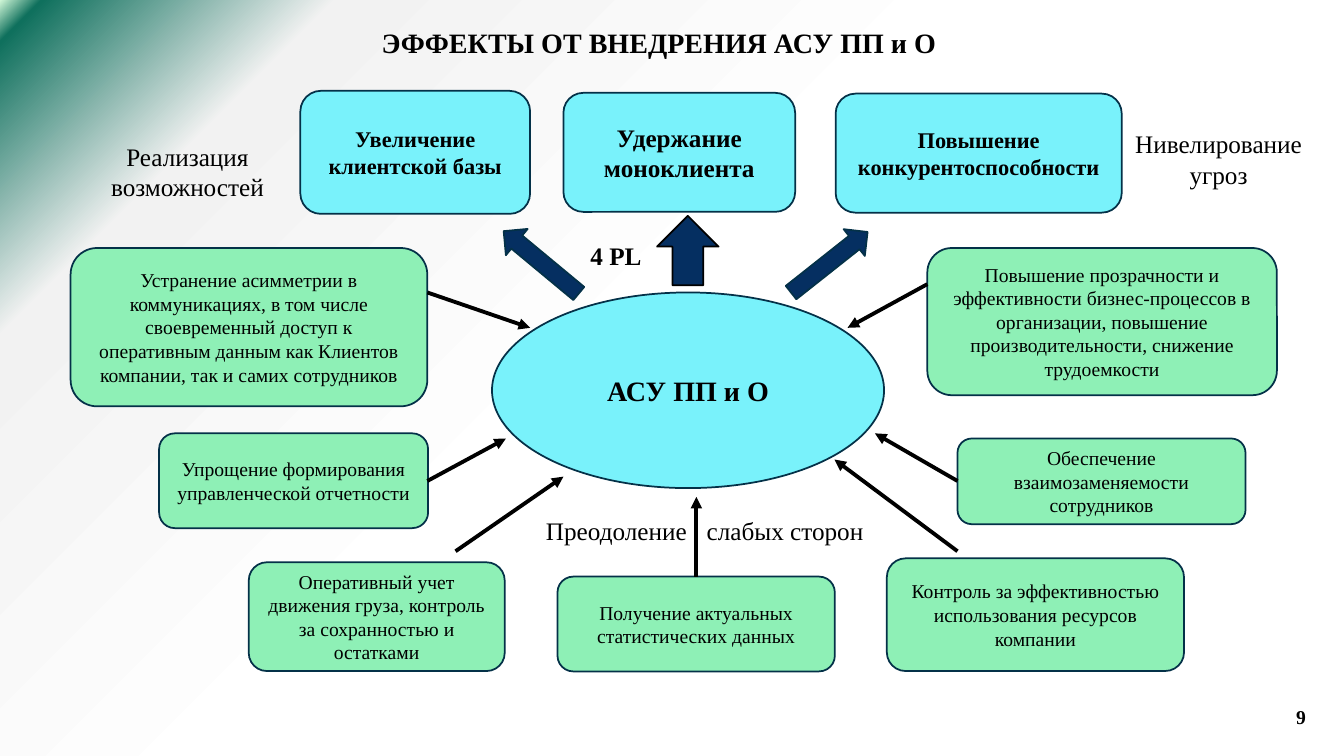
from dataclasses import dataclass

from lxml.etree import SubElement
from pptx import Presentation
from pptx.dml.color import RGBColor
from pptx.enum.shapes import MSO_CONNECTOR as Connector, MSO_SHAPE as Preset
from pptx.enum.text import MSO_ANCHOR as Anchor, PP_ALIGN as Align
from pptx.oxml import parse_xml
from pptx.oxml.ns import nsdecls, qn
from pptx.util import Cm, Pt


@dataclass(frozen=True)
class Theme:
    font: str = "Times New Roman"
    text: str = "000000"
    cyan: str = "79F2FB"
    green: str = "8EF0B6"
    navy: str = "052F61"
    outline: str = "043148"
    backdrop: tuple = ((0, "FFFFFF"), (53, "FFFFFF"), (84, "F2F2F2"), (98, "0F705D"), (100, "D3FADA"))
    heading: int = 20
    label: int = 18
    goal: int = 16
    body: int = 14
    outline_width: float = 1.25
    link_width: float = 2.75


THEME = Theme()

# Outcomes above the hub: text, place, type size
GOALS = [
    ("Увеличение клиентской базы", (7.57, 2.29, 5.79, 3.1), THEME.goal),
    ("Удержание\nмоноклиента", (14.2, 2.34, 5.84, 3), THEME.label),
    ("Повышение конкурентоспособности", (21.06, 2.36, 7.21, 3), THEME.goal),
]

# Effects around the hub: text, place, link start, link end
EFFECTS = [
    ("Устранение асимметрии в коммуникациях, в том числе своевременный доступ к "
     "оперативным данным как Клиентов компании, так и самих сотрудников",
     (1.78, 6.25, 8.99, 3.99), (10.77, 7.37), (13.36, 8.26)),
    ("Упрощение формирования управленческой отчетности",
     (4.01, 10.92, 6.78, 2.39), (10.77, 12.12), (12.75, 11.05)),
    ("Оперативный учет движения груза, контроль за сохранностью и остатками",
     (6.27, 14.17, 6.45, 2.74), (11.48, 13.89), (14.2, 12.01)),
    ("Получение актуальных статистических данных",
     (14.05, 14.53, 6.99, 2.39), (17.55, 14.53), (17.55, 12.52)),
    ("Контроль за эффективностью использования ресурсов компании",
     (22.35, 14.07, 7.49, 2.84), (24.13, 13.89), (21.03, 11.58)),
    ("Обеспечение взаимозаменяемости сотрудников",
     (24.13, 11.05, 7.26, 2.16), (24.13, 12.12), (22.05, 10.92)),
    ("Повышение прозрачности и эффективности бизнес-процессов в организации, "
     "повышение производительности, снижение трудоемкости",
     (23.37, 6.25, 8.81, 3.71), (23.37, 7.16), (21.36, 8.26)),
]

# Block arrows from the hub to the outcomes: place, rotation, outline
BLOCK_ARROWS = [
    ((13.21, 5.38, 0.86, 2.46), 309.7, THEME.outline),
    ((16.56, 5.44, 1.55, 1.75), 0, THEME.text),
    ((20.47, 5.38, 0.86, 2.46), 51.6, THEME.outline),
]


def lengths(values):
    return [Cm(value) for value in values]


def write(box, text, size=THEME.body, bold=False, align=Align.CENTER,
          anchor=Anchor.MIDDLE, tab=None):
    frame = box.text_frame
    frame.word_wrap = True
    frame.vertical_anchor = anchor
    for index, line in enumerate(text.split("\n")):
        para = frame.add_paragraph() if index else frame.paragraphs[0]
        para.alignment = align
        if tab:
            stops = SubElement(para._p.get_or_add_pPr(), qn("a:tabLst"))
            SubElement(stops, qn("a:tab"), pos=str(Cm(tab)), algn="l")
        span = para.add_run()
        span.text = line
        span.font.name = THEME.font
        span.font.size = Pt(size)
        span.font.bold = bold
        span.font.color.rgb = RGBColor.from_string(THEME.text)


def add_label(slide, text, place, size=THEME.label, anchor=Anchor.TOP, **style):
    box = slide.shapes.add_textbox(*lengths(place))
    write(box, text, size=size, anchor=anchor, **style)


def add_block(slide, preset, place, fill, outline=THEME.outline, rotation=0):
    block = slide.shapes.add_shape(preset, *lengths(place))
    block.shadow.inherit = False
    block.rotation = rotation
    block.fill.solid()
    block.fill.fore_color.rgb = RGBColor.from_string(fill)
    block.line.color.rgb = RGBColor.from_string(outline)
    block.line.width = Pt(THEME.outline_width)
    return block


def add_link(slide, start, end):
    link = slide.shapes.add_connector(Connector.STRAIGHT, *lengths(start + end))
    link.line.color.rgb = RGBColor.from_string(THEME.text)
    link.line.width = Pt(THEME.link_width)
    SubElement(link.line._get_or_add_ln(), qn("a:tailEnd"), type="triangle")
    SubElement(link._element.spPr, qn("a:effectLst"))


def paint_background(slide):
    stops = "".join(
        f'<a:gs pos="{position * 1000}"><a:srgbClr val="{color}"/></a:gs>'
        for position, color in THEME.backdrop)
    slide.element.cSld.insert(0, parse_xml(
        f'<p:bg {nsdecls("p", "a")}><p:bgPr><a:gradFill rotWithShape="1">'
        f'<a:gsLst>{stops}</a:gsLst><a:path path="circle">'
        '<a:fillToRect l="100000" t="100000"/></a:path></a:gradFill>'
        '<a:effectLst/></p:bgPr></p:bg>'))


def main():
    deck = Presentation()
    deck.slide_width, deck.slide_height = Cm(33.87), Cm(19.05)
    slide = deck.slides.add_slide(deck.slide_layouts[6])
    paint_background(slide)

    # Title
    add_label(slide, "ЭФФЕКТЫ ОТ ВНЕДРЕНИЯ АСУ ПП и О", (9.37, 0.53, 18.14, 1.12),
              size=THEME.heading, bold=True, align=Align.LEFT)

    # Hub and boxes
    hub = add_block(slide, Preset.OVAL, (12.4, 7.37, 9.88, 4.93), THEME.cyan)
    write(hub, "АСУ ПП и О", size=THEME.heading, bold=True)
    for text, place, size in GOALS:
        goal = add_block(slide, Preset.ROUNDED_RECTANGLE, place, THEME.cyan)
        write(goal, text, size=size, bold=True)
    for text, place, start, end in EFFECTS:
        effect = add_block(slide, Preset.ROUNDED_RECTANGLE, place, THEME.green)
        write(effect, text)
        add_link(slide, start, end)

    # Block arrows
    for place, rotation, outline in BLOCK_ARROWS:
        add_block(slide, Preset.UP_ARROW, place, THEME.navy, outline, rotation)

    # Labels and page number
    add_label(slide, "Реализация возможностей", (2.39, 3.43, 4.67, 1.8))
    add_label(slide, "Нивелирование\nугроз", (28.27, 3.12, 4.88, 1.8))
    add_label(slide, "4 PL", (14.63, 5.92, 2.06, 1.02), bold=True, align=Align.LEFT)
    add_label(slide, "Преодоление\tслабых сторон", (13.51, 12.85, 9.7, 1.02),
              align=Align.LEFT, tab=4.05)
    add_label(slide, "9", (31.7, 17.09, 2.18, 1.96), size=THEME.body, bold=True,
              anchor=Anchor.MIDDLE)

    deck.save("out.pptx")


if __name__ == "__main__":
    main()
